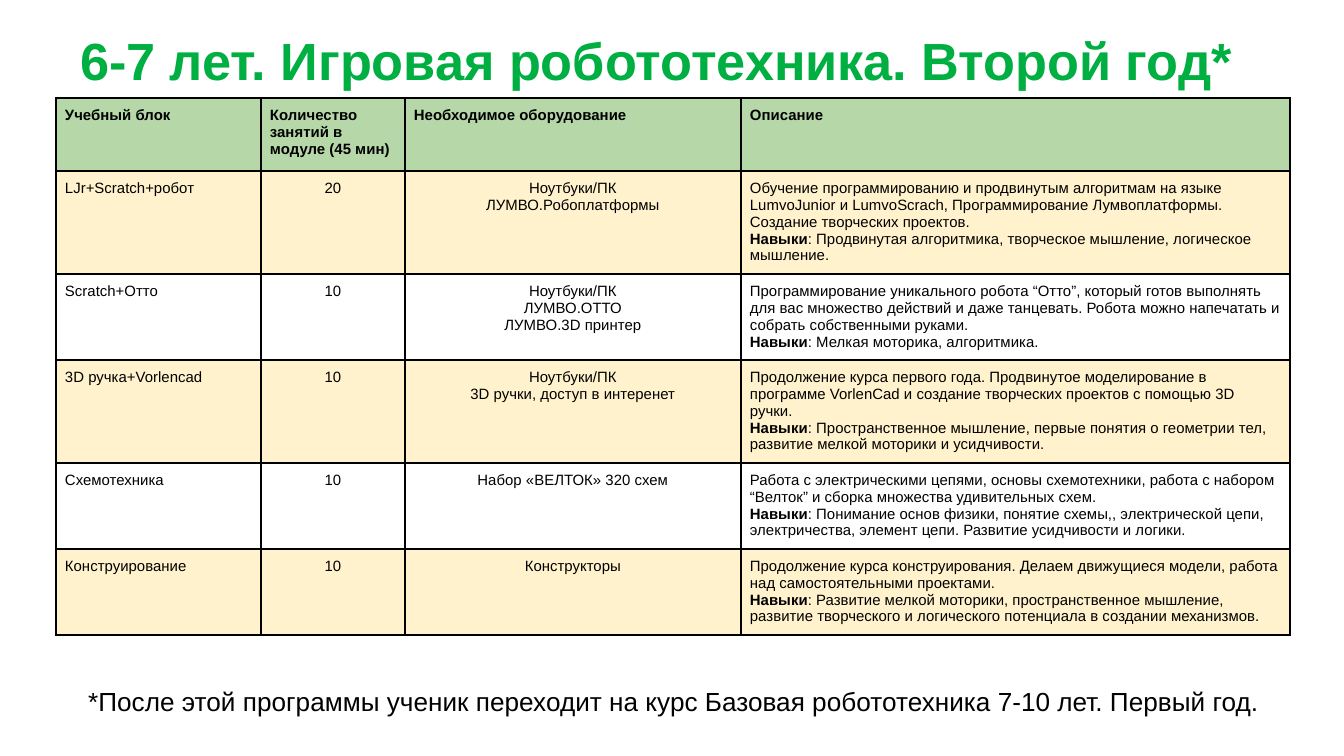
"""Build the slide with the second-year robotics programme for ages 6-7."""
import dataclasses

import lxml.etree
import pptx
import pptx.dml.color
import pptx.enum.text
import pptx.oxml.ns
import pptx.util


@dataclasses.dataclass(frozen=True)
class Theme:
    font: str = "Arial"
    title: str = "00AF41"
    ink: str = "000000"
    header: str = "B6D7A8"
    bands: tuple = ("FFF2CC", "FFFFFF")
    title_size: int = 28
    cell_size: int = 8
    note_size: int = 14


theme = Theme()
align = pptx.enum.text.PP_ALIGN
anchor = pptx.enum.text.MSO_ANCHOR
qn = pptx.oxml.ns.qn


def px(count):
    """Turn whole pixels into EMU."""
    return pptx.util.Emu(round(count * 914400 / 134.4))


def add_span(para, text, size, color=theme.ink, bold=False):
    """Add one formatted run to a paragraph."""
    span = para.add_run()
    span.text = text
    span.font.name = theme.font
    span.font.size = pptx.util.Pt(size)
    span.font.bold = bold
    span.font.color.rgb = pptx.dml.color.RGBColor.from_string(color)


headings = [
    "Учебный блок",
    "Количество занятий в модуле (45 мин)",
    "Необходимое оборудование",
    "Описание",
]
modules = [
    (
        "LJr+Scratch+робот", "20", ["Ноутбуки/ПК", "ЛУМВО.Робоплатформы"],
        "Обучение программированию и продвинутым алгоритмам на языке LumvoJunior и LumvoScrach, "
        "Программирование Лумвоплатформы. Создание творческих проектов.",
        "Продвинутая алгоритмика, творческое мышление, логическое мышление.",
    ),
    (
        "Scratch+Отто", "10", ["Ноутбуки/ПК", "ЛУМВО.ОТТО", "ЛУМВО.3D принтер"],
        "Программирование уникального робота “Отто”, который готов выполнять для вас множество "
        "действий и даже танцевать. Робота можно напечатать и собрать собственными руками.",
        "Мелкая моторика, алгоритмика.",
    ),
    (
        "3D ручка+Vorlencad", "10", ["Ноутбуки/ПК", "3D ручки, доступ в интеренет"],
        "Продолжение курса первого года. Продвинутое моделирование в программе VorlenCad "
        "и создание творческих проектов с помощью 3D ручки.",
        "Пространственное мышление, первые понятия о геометрии тел, развитие мелкой моторики "
        "и усидчивости.",
    ),
    (
        "Схемотехника", "10", ["Набор «ВЕЛТОК» 320 схем"],
        "Работа с электрическими цепями, основы схемотехники, работа с набором “Велток” "
        "и сборка множества удивительных схем.",
        "Понимание основ физики, понятие схемы,, электрической цепи, электричества, "
        "элемент цепи. Развитие усидчивости и логики.",
    ),
    (
        "Конструирование", "10", ["Конструкторы"],
        "Продолжение курса конструирования. Делаем движущиеся модели, работа над "
        "самостоятельными проектами.",
        "Развитие мелкой моторики, пространственное мышление, развитие творческого "
        "и логического потенциала в создании механизмов.",
    ),
]
column_widths = [205, 144, 336, 549]
row_heights = [73, 103, 86, 103, 86, 86]

deck = pptx.Presentation()
deck.slide_width, deck.slide_height = px(1344), px(756)
page = deck.slides.add_slide(deck.slide_layouts[5])

title = page.shapes.title
title.left, title.top, title.width, title.height = px(0), px(15), px(1290), px(128)
frame = title.text_frame
frame.word_wrap = True
frame.auto_size = pptx.enum.text.MSO_AUTO_SIZE.NONE
frame.vertical_anchor = anchor.TOP
frame.margin_left = frame.margin_top = frame.margin_right = frame.margin_bottom = px(13)
para = frame.paragraphs[0]
para.alignment = align.LEFT
properties = para._p.get_or_add_pPr()
properties.set("marL", str(px(67)))
properties.set("indent", "0")
add_span(para, "6-7 лет. Игровая робототехника. Второй год*", theme.title_size, theme.title, True)

table = page.shapes.add_table(
    len(row_heights), len(column_widths), px(56), px(98),
    px(sum(column_widths)), px(sum(row_heights)),
).table
table.first_row = table.horz_banding = False
for column, width in zip(table.columns, column_widths):
    column.width = px(width)
for row, height in zip(table.rows, row_heights):
    row.height = px(height)

contents = [[[[(heading, True)]] for heading in headings]]
for block, lessons, equipment, summary, skills in modules:
    contents.append([
        [[(block, False)]],
        [[(lessons, False)]],
        [[(item, False)] for item in equipment],
        [[(summary, False)], [("Навыки", True), (": " + skills, False)]],
    ])

for row_index, row_content in enumerate(contents):
    fill = theme.bands[(row_index - 1) % 2] if row_index else theme.header
    for column_index, paragraphs in enumerate(row_content):
        cell = table.cell(row_index, column_index)
        cell.margin_left = cell.margin_top = cell.margin_right = cell.margin_bottom = px(9)
        cell.vertical_anchor = anchor.TOP
        cell_properties = cell._tc.get_or_add_tcPr()
        for side in ("a:lnL", "a:lnR", "a:lnT", "a:lnB"):
            border = lxml.etree.SubElement(cell_properties, qn(side), w=str(pptx.util.Pt(1)))
            paint = lxml.etree.SubElement(border, qn("a:solidFill"))
            lxml.etree.SubElement(paint, qn("a:srgbClr"), val=theme.ink)
        cell.fill.solid()
        cell.fill.fore_color.rgb = pptx.dml.color.RGBColor.from_string(fill)
        for number, spans in enumerate(paragraphs):
            para = cell.text_frame.add_paragraph() if number else cell.text_frame.paragraphs[0]
            para.alignment = align.CENTER if row_index and column_index in (1, 2) else align.LEFT
            for text, bold in spans:
                add_span(para, text, theme.cell_size, bold=bold)

note = page.shapes.add_textbox(px(75), px(679), px(1215), px(46))
note.text_frame.word_wrap = True
add_span(
    note.text_frame.paragraphs[0],
    "*После этой программы ученик переходит на курс Базовая робототехника 7-10 лет. Первый год.",
    theme.note_size,
)

deck.save("out.pptx")
